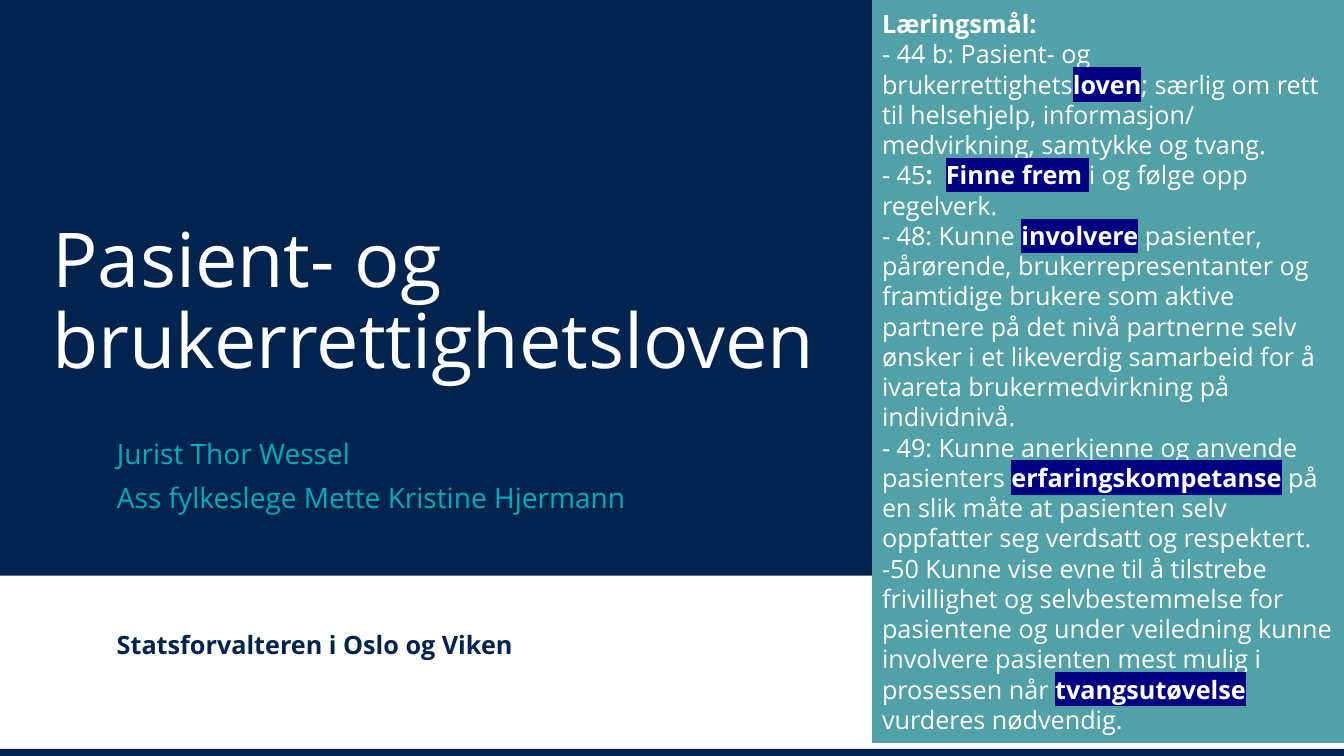
from lxml import etree
from pptx import Presentation
from pptx import util as u
from pptx.dml.color import RGBColor
from pptx.enum import shapes, text
from pptx.oxml.ns import qn

WIDTH, HEIGHT = 13.33, 7.5
COLOURS = {"navy": "00244E", "teal": "52A1A6", "cyan": "00ADBA",
           "white": "FFFFFF", "highlight": "000080"}
FONT = "Open Sans"

# Each goal is a list of (text, style); styles: "" plain, "b" bold, "h" bold and highlighted
GOALS = [
    [("Læringsmål:", "b")],
    [("- 44 b: Pasient- og brukerrettighets", ""), ("loven", "h"),
     ("; særlig om rett til helsehjelp, informasjon/ medvirkning, samtykke og tvang.", "")],
    [("- 45", ""), (":  ", "b"), ("Finne frem ", "h"), ("i og følge opp regelverk.", "")],
    [("- 48: Kunne ", ""), ("involvere", "h"),
     (" pasienter, pårørende, brukerrepresentanter og framtidige brukere som aktive "
      "partnere på det nivå partnerne selv ønsker i et likeverdig samarbeid for å "
      "ivareta brukermedvirkning på individnivå.", "")],
    [("- 49: Kunne anerkjenne og anvende pasienters ", ""), ("erfaringskompetanse", "h"),
     (" på en slik måte at pasienten selv oppfatter seg verdsatt og respektert.", "")],
    [("-50 Kunne vise evne til å tilstrebe frivillighet og selvbestemmelse for pasientene "
      "og under veiledning kunne involvere pasienten mest mulig i prosessen når ", ""),
     ("tvangsutøvelse", "h"), (" vurderes nødvendig.", "")],
]


def apply(target, values):
    for name, value in values.items():
        setattr(target, name, value)


def place(shape, left, top, width, height):
    apply(shape, {"left": u.Inches(left), "top": u.Inches(top),
                  "width": u.Inches(width), "height": u.Inches(height)})


def add_block(slide, colour, left, top, width, height):
    block = slide.shapes.add_shape(shapes.MSO_SHAPE.RECTANGLE, 0, 0, 0, 0)
    place(block, left, top, width, height)
    block.shadow.inherit = False
    block.fill.solid()
    block.fill.fore_color.rgb = RGBColor.from_string(COLOURS[colour])
    block.line.fill.background()
    return block


def highlight(run):
    properties = run.font._element
    mark = etree.Element(qn("a:highlight"))
    etree.SubElement(mark, qn("a:srgbClr"), val=COLOURS["highlight"])
    properties.find(qn("a:solidFill")).addnext(mark)


def add_text_shadow(run):
    effects = etree.Element(qn("a:effectLst"))
    shadow = etree.SubElement(effects, qn("a:outerShdw"), blurRad="38100",
                              dist="38100", dir="2700000", algn="tl")
    colour = etree.SubElement(shadow, qn("a:srgbClr"), val="000000")
    etree.SubElement(colour, qn("a:alpha"), val="43000")
    run.font._element.find(qn("a:solidFill")).addnext(effects)


def write(shape, paragraphs, size, colour, anchor, line_spacing=None, gap=0):
    """Fill a shape with paragraphs, each a list of (text, style) pairs."""
    frame = shape.text_frame
    apply(frame, {"word_wrap": True, "auto_size": text.MSO_AUTO_SIZE.NONE,
                  "vertical_anchor": anchor})
    for index, pieces in enumerate(paragraphs):
        paragraph = frame.paragraphs[0] if index == 0 else frame.add_paragraph()
        apply(paragraph, {"alignment": text.PP_ALIGN.LEFT, "line_spacing": line_spacing,
                          "space_before": u.Pt(gap if index else 0)})
        for words, style in pieces:
            run = paragraph.add_run()
            run.text = words
            apply(run.font, {"name": FONT, "size": u.Pt(size), "bold": style != ""})
            run.font.color.rgb = RGBColor.from_string(COLOURS[colour])
            if style == "h":
                highlight(run)


def add_background(slide):
    """Put the navy bands behind the placeholders."""
    bands = [(0, 5.71), (HEIGHT - 0.07, 0.07)]
    for position, (top, height) in enumerate(bands, start=2):
        band = add_block(slide, "navy", 0, top, WIDTH, height)
        slide.shapes._spTree.insert(position, band._element)


def main():
    presentation = Presentation()
    apply(presentation, {"slide_width": u.Inches(WIDTH), "slide_height": u.Inches(HEIGHT)})
    slide = presentation.slides.add_slide(presentation.slide_layouts[0])
    add_background(slide)
    top, middle, bottom = (text.MSO_ANCHOR.TOP, text.MSO_ANCHOR.MIDDLE,
                           text.MSO_ANCHOR.BOTTOM)

    title, authors = slide.placeholders
    place(title, 0.42, 1.05, 9.63, 2.82)
    write(title, [[("Pasient- og brukerrettighetsloven", "")]], 54, "white", bottom, 0.9)
    add_text_shadow(title.text_frame.paragraphs[0].runs[0])

    place(authors, 1.06, 4.32, 5.62, 1.13)
    names = ["Jurist Thor Wessel", "Ass fylkeslege Mette Kristine Hjermann"]
    write(authors, [[(name, "")] for name in names], 20, "cyan", top, 0.9, 10)

    goals = add_block(slide, "teal", 8.65, 0, WIDTH - 8.65, 7.37)
    write(goals, GOALS, 18, "white", middle)

    office = add_block(slide, "white", 1.06, 6.19, 4.47, 0.4)
    write(office, [[("Statsforvalteren i Oslo og Viken", "b")]], 18, "navy", middle)

    presentation.save("out.pptx")


if __name__ == "__main__":
    main()
